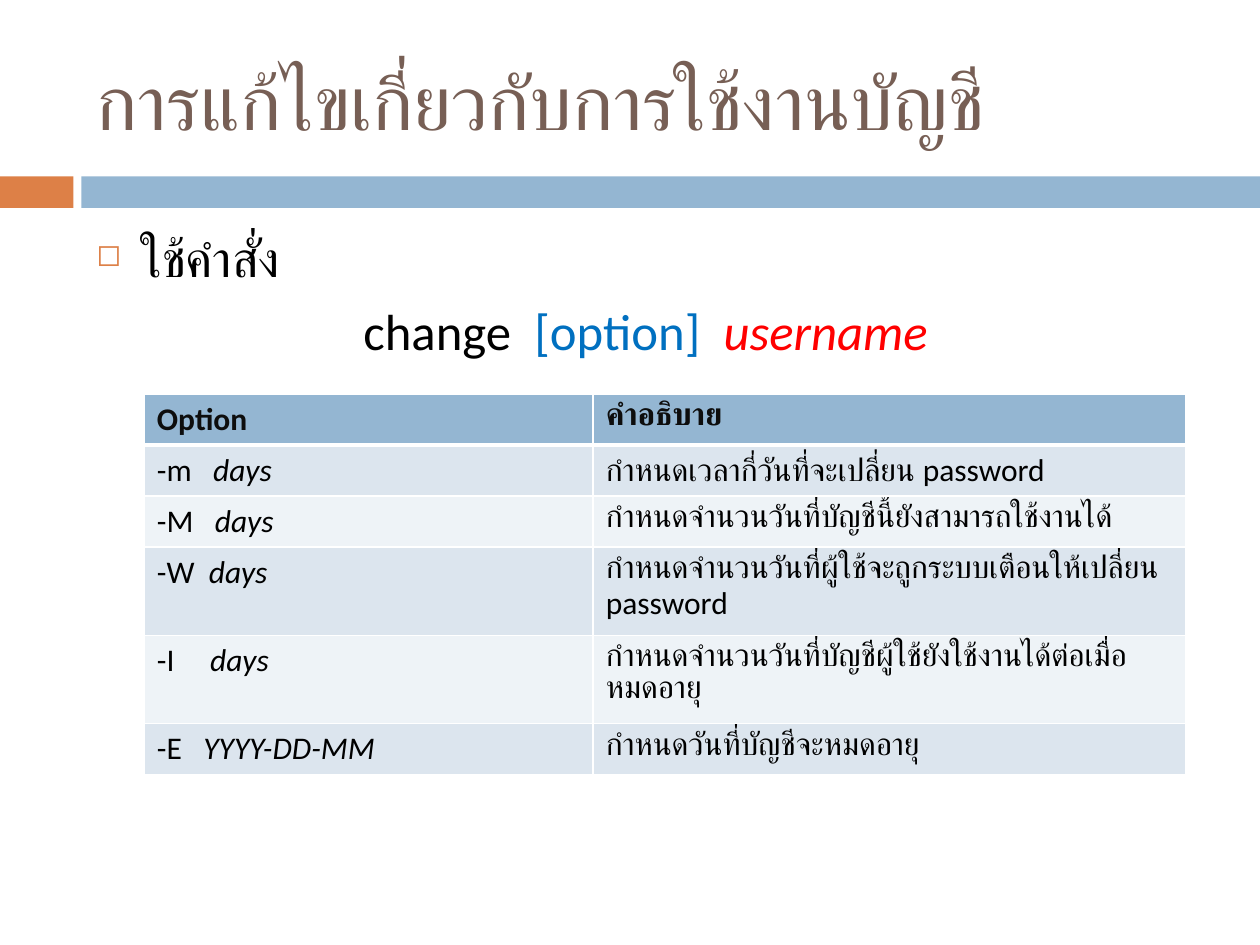
import lxml.etree
import pptx
import pptx.dml.color
import pptx.enum.shapes
import pptx.enum.text
import pptx.oxml.ns
import pptx.util

Pt = pptx.util.Pt
RGBColor = pptx.dml.color.RGBColor
ALIGN = pptx.enum.text.PP_ALIGN
ANCHOR = pptx.enum.text.MSO_ANCHOR
qn = pptx.oxml.ns.qn

ORANGE = RGBColor(0xDD, 0x80, 0x47)
BLUE = RGBColor(0x94, 0xB6, 0xD2)
BROWN = RGBColor(0x77, 0x5F, 0x55)
BLACK = RGBColor(0, 0, 0)
DARK = RGBColor(0x0D, 0x0D, 0x0D)
OPTION_BLUE = RGBColor(0, 0x70, 0xC0)
RED = RGBColor(0xFF, 0, 0)
WHITE = RGBColor(0xFF, 0xFF, 0xFF)
BANDS = (RGBColor(0xDC, 0xE5, 0xEE), RGBColor(0xEE, 0xF3, 0xF7))

OPTIONS = [
    ("-m   ", "days", "กำหนดเวลากี่วันที่จะเปลี่ยน password"),
    ("-M   ", "days", "กำหนดจำนวนวันที่บัญชีนี้ยังสามารถใช้งานได้"),
    ("-W  ", "days", "กำหนดจำนวนวันที่ผู้ใช้จะถูกระบบเตือนให้เปลี่ยน password"),
    ("-I     ", "days", "กำหนดจำนวนวันที่บัญชีผู้ใช้ยังใช้งานได้ต่อเมื่อหมดอายุ"),
    ("-E   ", "YYYY-DD-MM", "กำหนดวันที่บัญชีจะหมดอายุ"),
]


class SlideBuilder:
    """Hold the slide and its font, and add styled elements measured in points."""

    def __init__(self, slide, font):
        self.slide = slide
        self.font = font

    def bar(self, left, top, width, height, color):
        shape = self.slide.shapes.add_shape(
            pptx.enum.shapes.MSO_SHAPE.RECTANGLE, Pt(left), Pt(top), Pt(width), Pt(height))
        shape.shadow.inherit = False
        shape.fill.solid()
        shape.fill.fore_color.rgb = color
        shape.line.fill.background()

    def text_frame(self, left, top, width, height, anchor):
        box = self.slide.shapes.add_textbox(Pt(left), Pt(top), Pt(width), Pt(height))
        frame = box.text_frame
        frame.word_wrap = True
        frame.vertical_anchor = anchor
        return frame

    def run(self, paragraph, text, size, color, bold=False, italic=False):
        run = paragraph.add_run()
        run.text = text
        run.font.name = self.font
        run.font.size = Pt(size)
        run.font.color.rgb = color
        run.font.bold = bold
        run.font.italic = italic

    def hang(self, paragraph, indent, before):
        paragraph.space_before = Pt(before)
        properties = paragraph._p.get_or_add_pPr()
        properties.set("marL", str(Pt(indent)))
        properties.set("indent", str(-Pt(indent)))
        return properties

    def bullet(self, properties, character, color, percent):
        bullet_color = lxml.etree.SubElement(properties, qn("a:buClr"))
        lxml.etree.SubElement(bullet_color, qn("a:srgbClr"), val=str(color))
        lxml.etree.SubElement(properties, qn("a:buSzPct"), val=str(percent * 1000))
        lxml.etree.SubElement(properties, qn("a:buChar"), char=character)

    def table(self, left, top, widths, row_height, row_count):
        frame = self.slide.shapes.add_table(
            row_count, len(widths), Pt(left), Pt(top), Pt(sum(widths)), Pt(row_height * row_count))
        for column, width in zip(frame.table.columns, widths):
            column.width = Pt(width)
        return frame.table

    def cell(self, cell, fill, bottom, runs):
        cell.fill.solid()
        cell.fill.fore_color.rgb = fill
        properties = cell._tc.get_or_add_tcPr()
        for index, (side, width) in enumerate(zip("LRTB", (1, 1, 1, bottom))):
            line = lxml.etree.Element(qn("a:ln" + side), w=str(Pt(width)))
            solid = lxml.etree.SubElement(line, qn("a:solidFill"))
            lxml.etree.SubElement(solid, qn("a:srgbClr"), val=str(WHITE))
            properties.insert(index, line)
        for text, color, bold, italic in runs:
            self.run(cell.text_frame.paragraphs[0], text, 18, color, bold, italic)


def main():
    presentation = pptx.Presentation()
    presentation.slide_width = Pt(720)
    presentation.slide_height = Pt(540)
    slide = presentation.slides.add_slide(presentation.slide_layouts[6])
    builder = SlideBuilder(slide, "Calibri")

    builder.bar(0, 100.8, 42, 18, ORANGE)
    builder.bar(46.5, 100.8, 673.5, 18, BLUE)

    title = builder.text_frame(48, 18, 642, 78, ANCHOR.MIDDLE)
    builder.run(title.paragraphs[0], "การแก้ไขเกี่ยวกับการใช้งานบัญชี", 44, BROWN)

    body = builder.text_frame(48, 126, 642, 354, ANCHOR.TOP)
    intro = body.paragraphs[0]
    builder.bullet(builder.hang(intro, 25.2, 7), "◻", ORANGE, 60)
    builder.run(intro, "ใช้คำสั่ง", 29, BLACK)
    command = body.add_paragraph()
    command.alignment = ALIGN.CENTER
    builder.hang(command, 25.2, 7)
    builder.run(command, "change  ", 29, BLACK)
    builder.run(command, "[option]  ", 29, OPTION_BLUE)
    builder.run(command, "username", 29, RED, italic=True)

    table = builder.table(82.5, 225, (256.5, 338.5), 29.2, len(OPTIONS) + 1)
    for column, heading in enumerate(("Option", "คำอธิบาย")):
        builder.cell(table.cell(0, column), BLUE, 3, [(heading, DARK, True, False)])
    for row, (flag, value, meaning) in enumerate(OPTIONS, 1):
        fill = BANDS[(row - 1) % 2]
        builder.cell(table.cell(row, 0), fill, 1,
                     [(flag, BLACK, False, False), (value, BLACK, False, True)])
        builder.cell(table.cell(row, 1), fill, 1, [(meaning, BLACK, False, False)])

    presentation.save("out.pptx")


if __name__ == "__main__":
    main()
